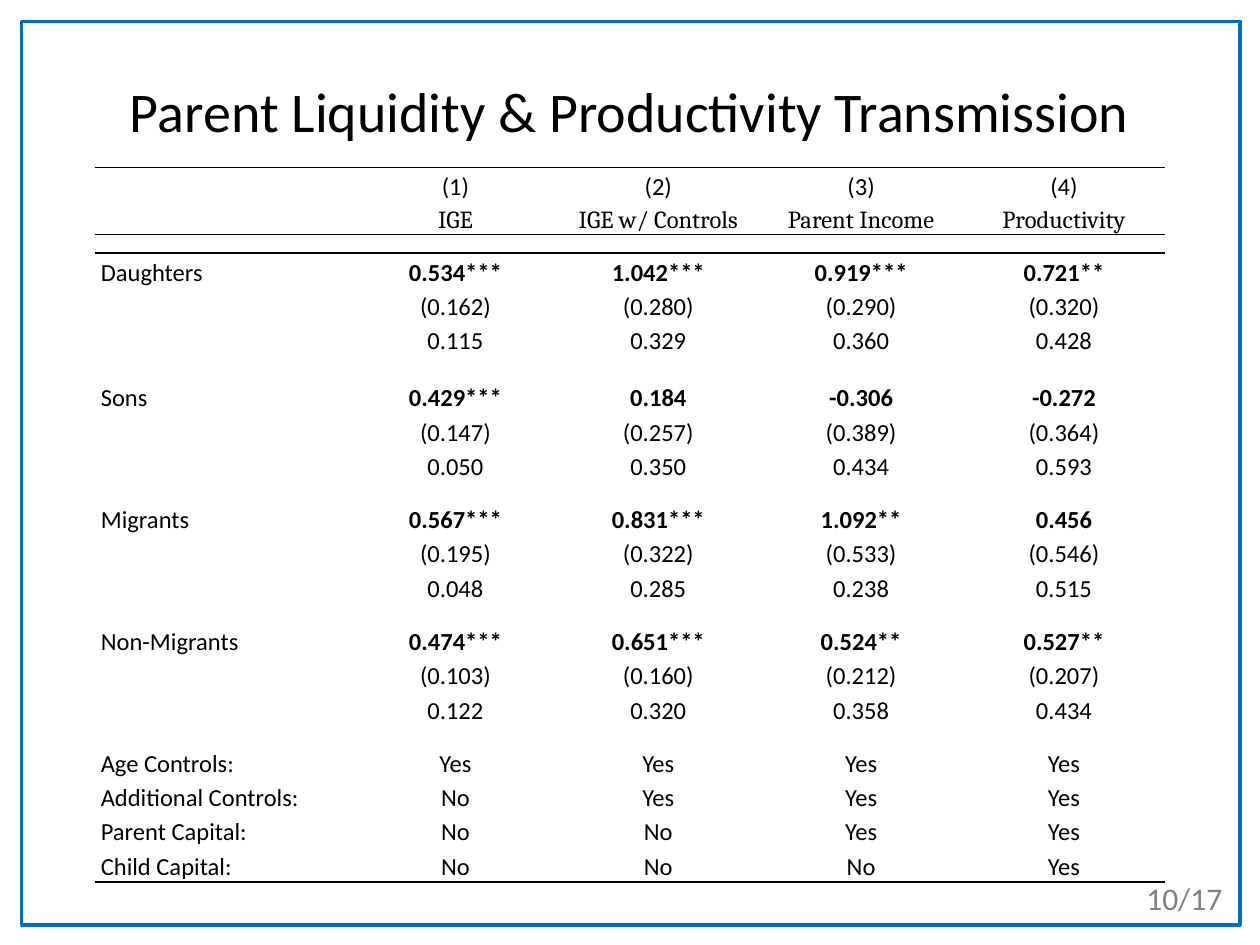
from lxml.etree import SubElement
from pptx import Presentation
from pptx.dml.color import RGBColor
from pptx.enum.shapes import MSO_SHAPE as Shape
from pptx.enum.text import MSO_ANCHOR as Anchor, MSO_AUTO_SIZE as AutoSize, PP_ALIGN as Align
from pptx.oxml.ns import qn
from pptx.util import Inches, Pt

COLORS = {"frame": "0070C0", "text": "000000", "page": "808080"}
NO_STYLE = "{2D5ABB26-0587-4C30-8999-92F81FD0307C}"
LABEL_WIDTH, VALUE_WIDTH = 2.06, 1.61
HEADER_HEIGHT, ROW_HEIGHT = 0.53, 0.27

HEADINGS = ["IGE", "IGE w/ Controls", "Parent Income", "Productivity"]

# Each group: gap above it, then its rows of label and four values.
GROUPS = [
    (0.15, [
        ["Daughters", "0.534***", "1.042***", "0.919***", "0.721**"],
        ["", "(0.162)", "(0.280)", "(0.290)", "(0.320)"],
        ["", "0.115", "0.329", "0.360", "0.428"],
    ]),
    (0.18, [
        ["Sons", "0.429***", "0.184", "-0.306", "-0.272"],
        ["", "(0.147)", "(0.257)", "(0.389)", "(0.364)"],
        ["", "0.050", "0.350", "0.434", "0.593"],
    ]),
    (0.15, [
        ["Migrants", "0.567***", "0.831***", "1.092**", "0.456"],
        ["", "(0.195)", "(0.322)", "(0.533)", "(0.546)"],
        ["", "0.048", "0.285", "0.238", "0.515"],
    ]),
    (0.15, [
        ["Non-Migrants", "0.474***", "0.651***", "0.524**", "0.527**"],
        ["", "(0.103)", "(0.160)", "(0.212)", "(0.207)"],
        ["", "0.122", "0.320", "0.358", "0.434"],
    ]),
    (0.15, [
        ["Age Controls:", "Yes", "Yes", "Yes", "Yes"],
        ["Additional Controls:", "No", "Yes", "Yes", "Yes"],
        ["Parent Capital:", "No", "No", "Yes", "Yes"],
        ["Child Capital:", "No", "No", "No", "Yes"],
    ]),
]


def color(name):
    return RGBColor.from_string(COLORS[name])


def style_font(font, size, tone="text", name="Calibri", bold=False):
    font.size, font.name, font.bold = Pt(size), name, bold
    font.color.rgb = color(tone)


def add_frame(page):
    frame = page.shapes.add_shape(
        Shape.RECTANGLE, Inches(0.17), Inches(0.17), Inches(9.67), Inches(7.17))
    frame.shadow.inherit = False
    frame.fill.background()
    frame.line.color.rgb = color("frame")
    frame.line.width = Pt(2)


def add_text(page, text, bounds, size, tone="text", align=Align.LEFT, anchor=Anchor.TOP):
    box = page.shapes.add_textbox(*map(Inches, bounds))
    frame = box.text_frame
    frame.word_wrap = True
    frame.vertical_anchor = anchor
    para = frame.paragraphs[0]
    para.text, para.alignment = text, align
    style_font(para.font, size, tone)
    return frame


def add_rule(cell, side):
    """Draw a 1 pt line on one side of a cell: lnT or lnB."""
    line = SubElement(cell._tc.get_or_add_tcPr(), qn(f"a:{side}"), w=str(Pt(1)))
    fill = SubElement(line, qn("a:solidFill"))
    SubElement(fill, qn("a:srgbClr"), val=COLORS["text"])


def fill_cell(cell, text, align, bold=False):
    cell.margin_left = cell.margin_right = Inches(0.05)
    cell.margin_top = cell.margin_bottom = 0
    cell.fill.background()
    cell.text = text
    for para, name in zip(cell.text_frame.paragraphs, ("Calibri", "Cambria")):
        para.alignment, para.line_spacing = align, 1.15
        if text:
            style_font(para.font, 14, name=name, bold=bold)
        else:
            # A small end mark lets gap rows stay low.
            SubElement(para._p, qn("a:endParaRPr"), sz="800")


def table_rows():
    """List each row as its height and its five texts."""
    header = [""] + [f"({n})\n{name}" for n, name in enumerate(HEADINGS, 1)]
    rows = [(HEADER_HEIGHT, header)]
    for gap, lines in GROUPS:
        rows.append((gap, [""] * len(header)))
        rows += [(ROW_HEIGHT, line) for line in lines]
    return rows


def add_results(page):
    rows = table_rows()
    widths = [LABEL_WIDTH] + [VALUE_WIDTH] * len(HEADINGS)
    height = sum(row_height for row_height, _ in rows)
    table = page.shapes.add_table(
        len(rows), len(widths), Inches(0.75), Inches(1.33),
        Inches(sum(widths)), Inches(height)).table
    table.first_row = table.horz_banding = False
    table._tbl.tblPr.find(qn("a:tableStyleId")).text = NO_STYLE
    for column, width in zip(table.columns, widths):
        column.width = Inches(width)

    rules = {0: ("lnT", "lnB"), 1: ("lnT",), len(rows) - 1: ("lnB",)}
    for r, (row_height, texts) in enumerate(rows):
        table.rows[r].height = Inches(row_height)
        for c, text in enumerate(texts):
            cell = table.cell(r, c)
            for side in rules.get(r, ()):
                add_rule(cell, side)
            estimate = c > 0 and texts[0] != "" and not texts[0].endswith(":")
            fill_cell(cell, text, Align.CENTER if c else Align.LEFT, estimate)


def main():
    deck = Presentation()
    deck.slide_width, deck.slide_height = Inches(10), Inches(7.5)
    page = deck.slides.add_slide(deck.slide_layouts[6])
    add_frame(page)
    add_results(page)
    add_text(page, "Parent Liquidity & Productivity Transmission",
             (0.5, 0.25, 9, 1.25), 32, align=Align.CENTER, anchor=Anchor.MIDDLE)
    number = add_text(page, "10/17", (9, 6.93, 0.83, 0.4), 18, "page")
    number.auto_size = AutoSize.SHAPE_TO_FIT_TEXT
    deck.save("out.pptx")


if __name__ == "__main__":
    main()
